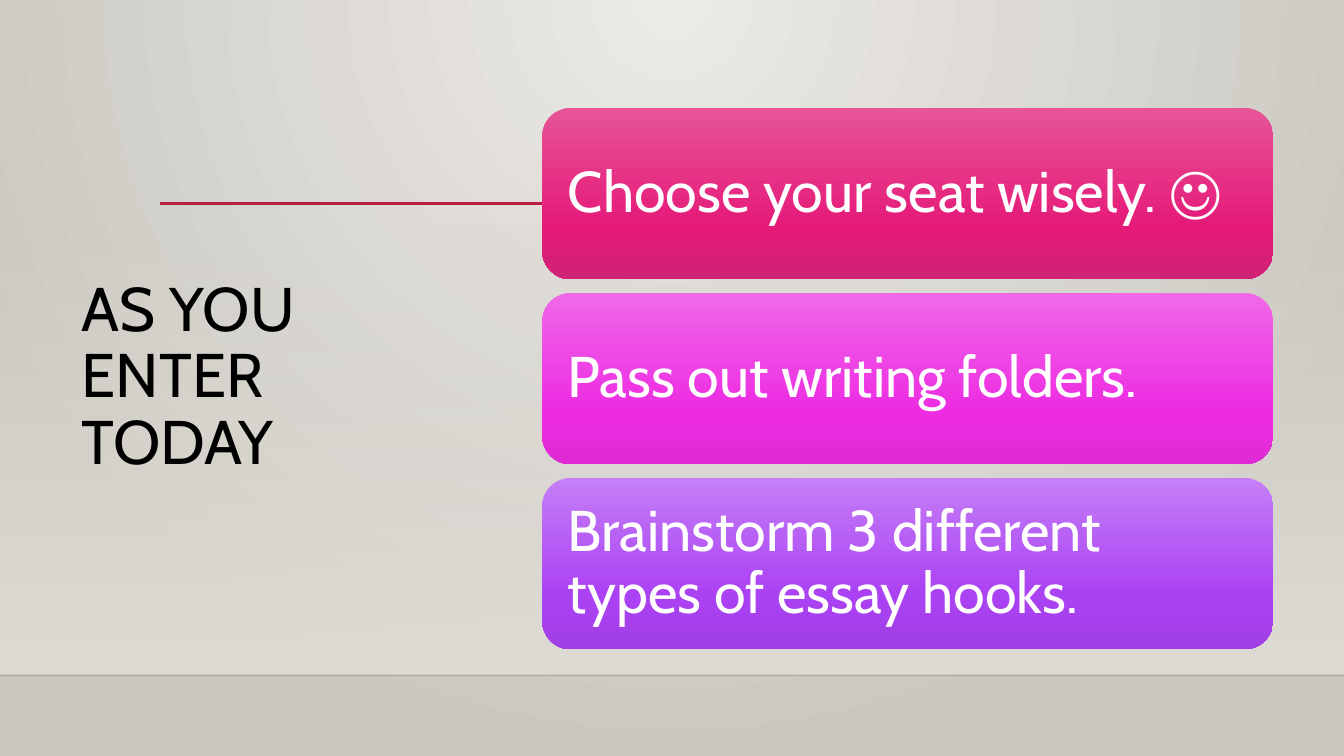
from dataclasses import dataclass

from lxml.etree import SubElement
from pptx import Presentation
from pptx.dml.color import RGBColor
from pptx.enum.shapes import MSO_CONNECTOR, MSO_SHAPE
from pptx.enum.text import MSO_ANCHOR, MSO_AUTO_SIZE, PP_ALIGN
from pptx.oxml import parse_xml
from pptx.oxml.ns import nsdecls, qn
from pptx.util import Inches, Pt


@dataclass(frozen=True)
class Theme:
    font: str = "Cabin"
    title_size: int = 44
    card_size: int = 41
    title_color: str = "000000"
    card_text: str = "FFFFFF"
    accent: str = "B71E42"
    horizon: str = "000001"
    # Gradient stops: position %, colour, opacity %
    backdrop: tuple = ((0, "ECEAE7", 100), (100, "CAC7C1", 100))
    haze: tuple = ((0, "DFDBD5", 0), (100, "DFDBD5", 100))
    pink: tuple = ((0, "E75597", 100), (69, "E51A79", 100), (100, "CF2374", 100))
    magenta: tuple = ((0, "F068E8", 100), (69, "ED2CE2", 100), (100, "E02BD5", 100))
    violet: tuple = ((0, "C57FF7", 100), (69, "AA41F3", 100), (100, "A13FE5", 100))


DOWNWARD = '<a:lin ang="5400000" scaled="0"/>'
FROM_TOP = '<a:path path="circle"><a:fillToRect l="43000" r="43000" b="100000"/></a:path>'


class SlideBuilder:
    """Draws on one slide; every length is a percentage of its width or height."""

    def __init__(self, deck, theme):
        self.deck, self.theme = deck, theme
        self.slide = deck.slides.add_slide(deck.slide_layouts[5])

    def box(self, left, top, width, height):
        across, down = self.deck.slide_width / 100, self.deck.slide_height / 100
        return (round(left * across), round(top * down),
                round(width * across), round(height * down))

    def paint(self, properties, stops, direction=DOWNWARD):
        """Swap a solid fill for a gradient."""
        marks = "".join(
            f'<a:gs pos="{place * 1000}"><a:srgbClr val="{color}">'
            f'<a:alpha val="{opacity * 1000}"/></a:srgbClr></a:gs>'
            for place, color, opacity in stops)
        gradient = parse_xml(f'<a:gradFill {nsdecls("a")} rotWithShape="1">'
                             f'<a:gsLst>{marks}</a:gsLst>{direction}</a:gradFill>')
        properties.replace(properties.find(qn("a:solidFill")), gradient)

    def background(self, stops):
        self.slide.background.fill.solid()
        self.paint(self.slide.element.find(".//" + qn("p:bgPr")), stops, FROM_TOP)

    def panel(self, kind, area, stops):
        panel = self.slide.shapes.add_shape(kind, *self.box(*area))
        panel.shadow.inherit = False
        panel.fill.solid()
        self.paint(panel.element.spPr, stops)
        panel.line.fill.background()
        return panel

    def rule(self, start, end, height, color, weight, opacity=100):
        left, top, right, _ = self.box(start, height, end, 0)
        rule = self.slide.shapes.add_connector(MSO_CONNECTOR.STRAIGHT, left, top, right, top)
        rule.line.color.rgb = RGBColor.from_string(color)
        rule.line.width = Pt(weight)
        shade = rule.element.spPr.find(".//" + qn("a:srgbClr"))
        SubElement(shade, qn("a:alpha"), val=str(opacity * 1000))
        SubElement(rule.element.spPr, qn("a:effectLst"))

    def set_wording(self, frame, wording, size, color):
        frame.text = wording
        frame.word_wrap = True
        frame.auto_size = MSO_AUTO_SIZE.NONE
        frame.vertical_anchor = MSO_ANCHOR.MIDDLE
        paragraph = frame.paragraphs[0]
        paragraph.alignment = PP_ALIGN.LEFT
        paragraph.line_spacing = 0.9
        font = paragraph.runs[0].font
        font.name, font.size = self.theme.font, Pt(size)
        font.color.rgb = RGBColor.from_string(color)

    def title(self, wording, area):
        title = self.slide.shapes.title
        title.left, title.top, title.width, title.height = self.box(*area)
        self.set_wording(title.text_frame, wording,
                         self.theme.title_size, self.theme.title_color)
        # Bring the title in front of the backdrop
        title.element.getparent().append(title.element)

    def card(self, wording, area, stops):
        frame = self.panel(MSO_SHAPE.ROUNDED_RECTANGLE, area, stops).text_frame
        frame.margin_left = frame.margin_right = Inches(0.17)
        frame.margin_top = frame.margin_bottom = Inches(0.17)
        self.set_wording(frame, wording, self.theme.card_size, self.theme.card_text)


def main():
    deck = Presentation()
    deck.slide_width, deck.slide_height = Inches(13.33), Inches(7.5)
    theme = Theme()
    builder = SlideBuilder(deck, theme)

    # Backdrop
    builder.background(theme.backdrop)
    builder.panel(MSO_SHAPE.RECTANGLE, (0, 29.47, 100, 59.87), theme.haze)
    builder.rule(0, 100, 89.33, theme.horizon, 1, opacity=20)
    builder.rule(11.93, 90.75, 26.93, theme.accent, 2.5)

    # Title
    builder.title("AS YOU ENTER TODAY", (5.33, 20.13, 29.1, 59.73))

    # Instruction cards
    instructions = (
        ("Choose your seat wisely. ☺", theme.pink),
        ("Pass out writing folders.", theme.magenta),
        ("Brainstorm 3 different types of essay hooks.", theme.violet),
    )
    first_top, pitch = 14.27, 24.47
    for order, (wording, stops) in enumerate(instructions):
        builder.card(wording, (40.35, first_top + order * pitch, 54.38, 22.67), stops)

    deck.save("out.pptx")


if __name__ == "__main__":
    main()
